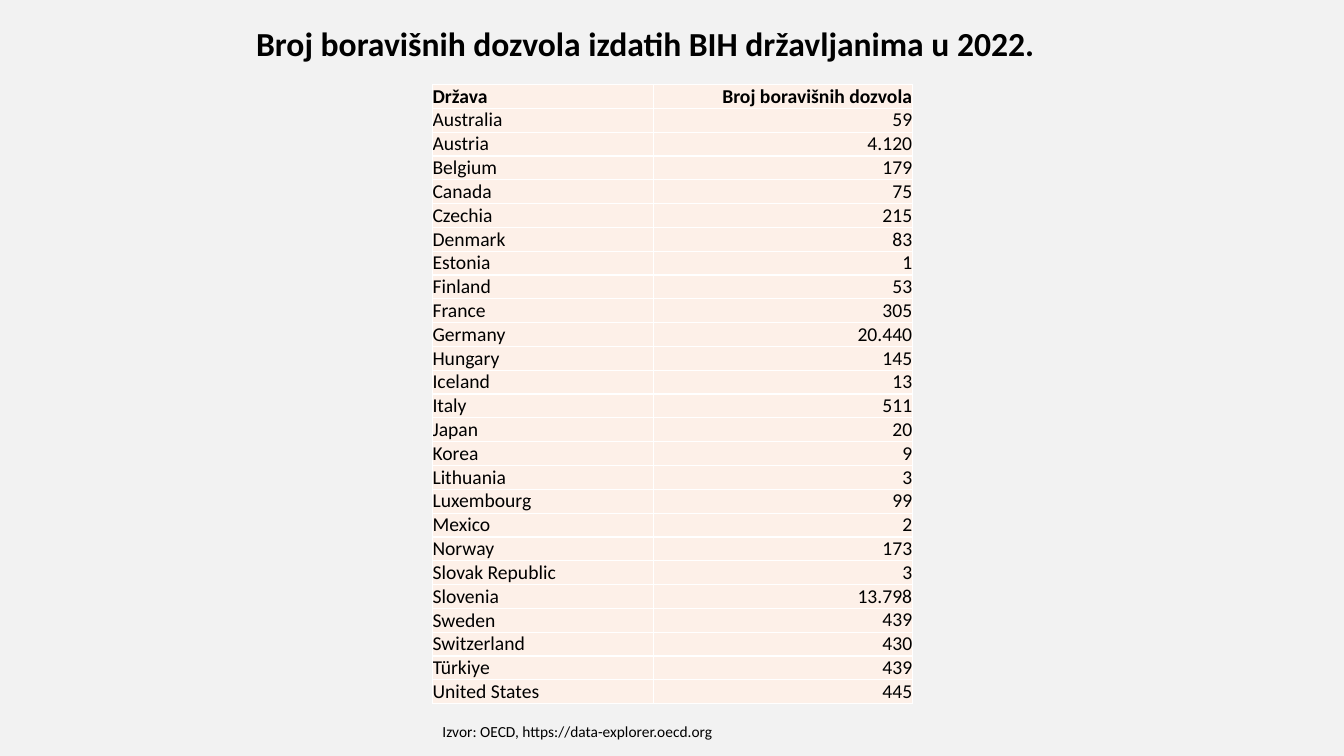
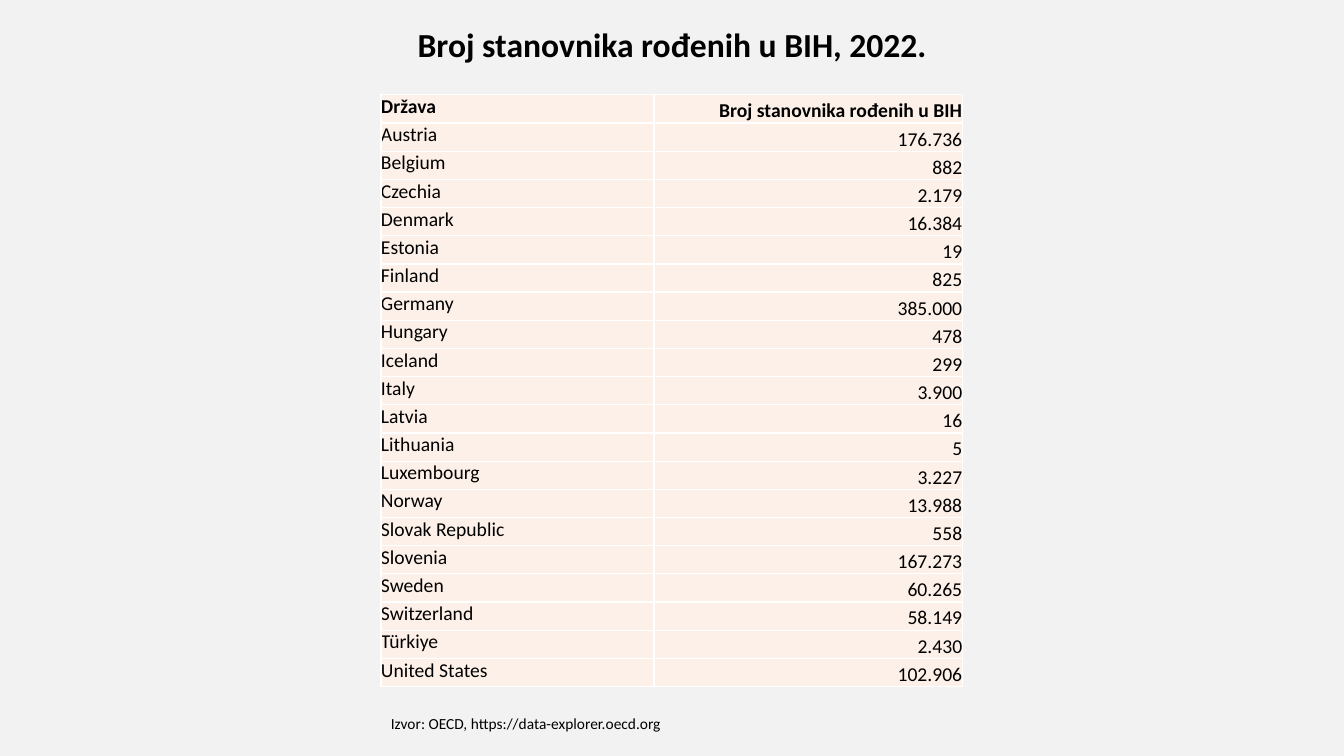
from lxml.etree import SubElement
from pptx import Presentation
from pptx.dml.color import RGBColor
from pptx.enum.text import MSO_ANCHOR as ANCHOR, MSO_AUTO_SIZE as AUTO, PP_ALIGN as ALIGN
from pptx.oxml.ns import qn
from pptx.util import Cm, Pt

BACKGROUND = RGBColor(0xF2, 0xF2, 0xF2)
CELL = RGBColor(0xFD, 0xF0, 0xE8)
BORDER = RGBColor(0xFF, 0xFF, 0xFF)
TEXT = RGBColor(0, 0, 0)

SOURCE = "Izvor: OECD, https://data-explorer.oecd.org"

PERMITS = [
    ("Država", "Broj boravišnih dozvola"),
    ("Australia", "59"),
    ("Austria", "4.120"),
    ("Belgium", "179"),
    ("Canada", "75"),
    ("Czechia", "215"),
    ("Denmark", "83"),
    ("Estonia", "1"),
    ("Finland", "53"),
    ("France", "305"),
    ("Germany", "20.440"),
    ("Hungary", "145"),
    ("Iceland", "13"),
    ("Italy", "511"),
    ("Japan", "20"),
    ("Korea", "9"),
    ("Lithuania", "3"),
    ("Luxembourg", "99"),
    ("Mexico", "2"),
    ("Norway", "173"),
    ("Slovak Republic", "3"),
    ("Slovenia", "13.798"),
    ("Sweden", "439"),
    ("Switzerland", "430"),
    ("Türkiye", "439"),
    ("United States", "445"),
]

RESIDENTS = [
    ("Država", "Broj stanovnika rođenih u BIH"),
    ("Austria", "176.736"),
    ("Belgium", "882"),
    ("Czechia", "2.179"),
    ("Denmark", "16.384"),
    ("Estonia", "19"),
    ("Finland", "825"),
    ("Germany", "385.000"),
    ("Hungary", "478"),
    ("Iceland", "299"),
    ("Italy", "3.900"),
    ("Latvia", "16"),
    ("Lithuania", "5"),
    ("Luxembourg", "3.227"),
    ("Norway", "13.988"),
    ("Slovak Republic", "558"),
    ("Slovenia", "167.273"),
    ("Sweden", "60.265"),
    ("Switzerland", "58.149"),
    ("Türkiye", "2.430"),
    ("United States", "102.906"),
]


def apply(target, values):
    for name, value in values.items():
        setattr(target, name, value)


class Deck:
    title_font = {"name": "Calibri", "size": Pt(24), "bold": True}
    cell_font = {"name": "Calibri", "size": Pt(14), "bold": False}
    source_font = {"name": "Calibri", "size": Pt(11), "bold": False}
    frame = {"word_wrap": True, "auto_size": AUTO.SHAPE_TO_FIT_TEXT,
             "vertical_anchor": ANCHOR.TOP}
    cell_margins = {"margin_left": 0, "margin_right": 0,
                    "margin_top": 0, "margin_bottom": 0}

    def __init__(self):
        self.prs = Presentation()
        apply(self.prs, {"slide_width": Cm(33.87), "slide_height": Cm(19.05)})
        fill = self.prs.slide_master.background.fill
        fill.solid()
        fill.fore_color.rgb = BACKGROUND
        self.s = None

    def add_slide(self):
        self.s = self.prs.slides.add_slide(self.prs.slide_layouts[5])

    def put_text(self, tf, text, font, align):
        p = tf.paragraphs[0]
        p.alignment = align
        r = p.add_run()
        r.text = text
        apply(r.font, font)
        r.font.color.rgb = TEXT

    def title(self, text, left, top, width, align):
        sp = self.s.shapes.title
        apply(sp, {"left": Cm(left), "top": Cm(top),
                   "width": Cm(width), "height": Cm(1.28)})
        apply(sp.text_frame, self.frame)
        self.put_text(sp.text_frame, text, self.title_font, align)

    def border(self, cell):
        props = cell._tc.get_or_add_tcPr()
        for side in ("a:lnL", "a:lnR", "a:lnT", "a:lnB"):
            line = SubElement(props, qn(side), w=str(Pt(1)))
            fill = SubElement(line, qn("a:solidFill"))
            SubElement(fill, qn("a:srgbClr"), val=str(BORDER))

    def table(self, rows, left, top, widths, row_height):
        sp = self.s.shapes.add_table(
            len(rows), len(widths), Cm(left), Cm(top),
            Cm(sum(widths)), Cm(row_height * len(rows)))
        table = sp.table
        apply(table, {"first_row": False, "horz_banding": False})
        for column, width in zip(table.columns, widths):
            column.width = Cm(width)
        columns = ((ALIGN.LEFT, ANCHOR.TOP), (ALIGN.RIGHT, ANCHOR.BOTTOM))
        for i, values in enumerate(rows):
            table.rows[i].height = Cm(row_height)
            font = {**self.cell_font, "bold": i == 0}
            for j, (text, (align, anchor)) in enumerate(zip(values, columns)):
                cell = table.cell(i, j)
                apply(cell, {**self.cell_margins, "vertical_anchor": anchor})
                self.border(cell)
                cell.fill.solid()
                cell.fill.fore_color.rgb = CELL
                self.put_text(cell.text_frame, text, font, align)

    def source(self, left, top):
        sp = self.s.shapes.add_textbox(Cm(left), Cm(top), Cm(19.86), Cm(0.73))
        apply(sp.text_frame, self.frame)
        self.put_text(sp.text_frame, SOURCE, self.source_font, ALIGN.LEFT)


def main():
    deck = Deck()

    deck.add_slide()
    deck.title("Broj boravišnih dozvola izdatih BIH državljanima u 2022.",
               6.2, 0.46, 24.97, ALIGN.LEFT)
    deck.table(PERMITS, 10.9, 2.13, (5.56, 6.53), 0.6)
    deck.source(10.9, 18.08)

    deck.add_slide()
    deck.title("Broj stanovnika rođenih u BIH, 2022.",
               6.68, 0.48, 20.52, ALIGN.CENTER)
    deck.table(RESIDENTS, 9.6, 2.39, (6.88, 7.77), 0.71)
    deck.source(9.6, 17.86)

    deck.prs.save("out.pptx")


if __name__ == "__main__":
    main()
